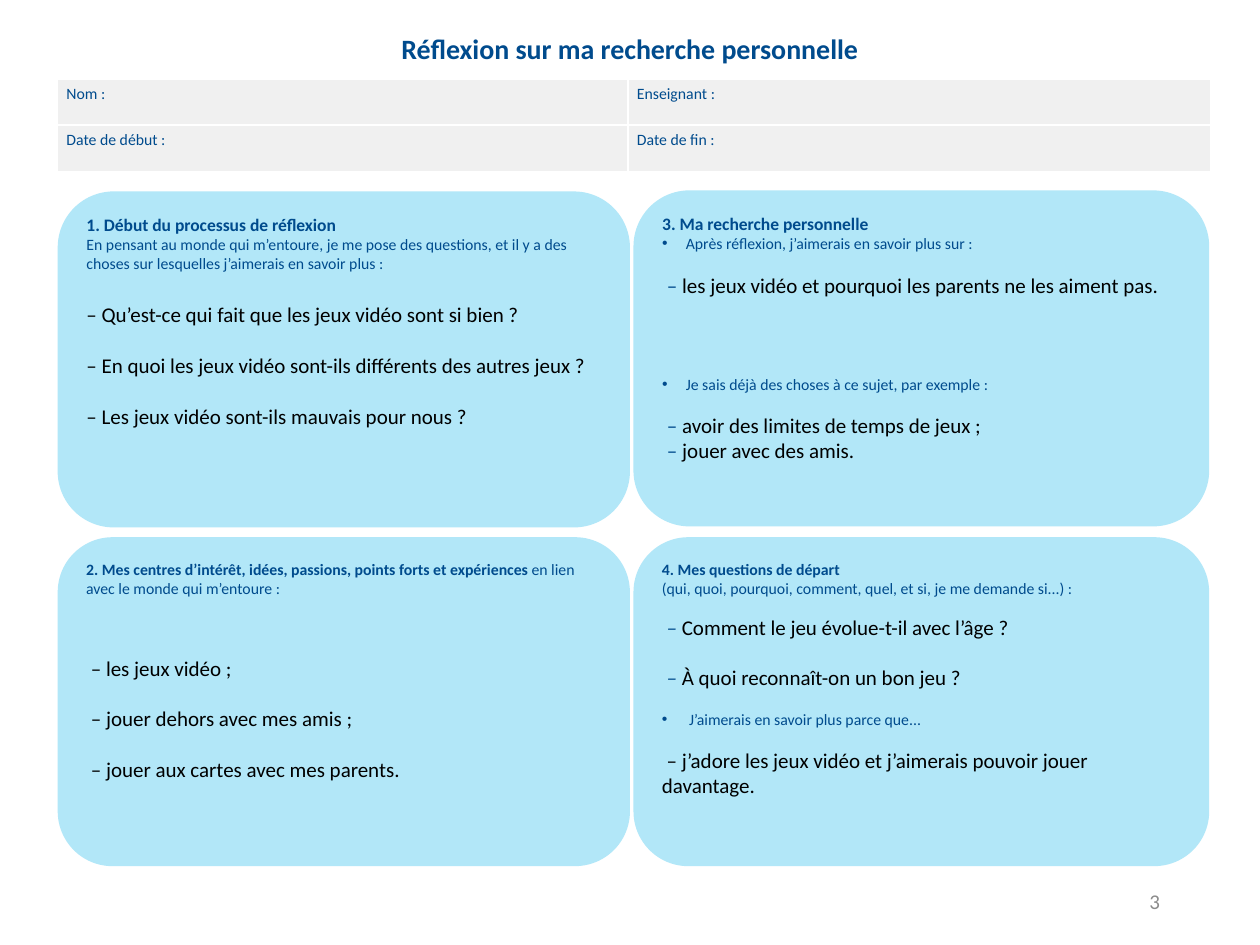
from lxml.etree import SubElement
from pptx import Presentation
from pptx.dml.color import RGBColor
from pptx.enum.shapes import MSO_SHAPE as Shape
from pptx.enum.text import MSO_ANCHOR as Anchor, PP_ALIGN as Align
from pptx.oxml.ns import qn
from pptx.util import Pt

NAVY = RGBColor(0x00, 0x4B, 0x8D)
BLACK = RGBColor(0x00, 0x00, 0x00)
GREY = RGBColor(0x8C, 0x8C, 0x8C)
PALE_GREY = RGBColor(0xF0, 0xF0, 0xF0)
SKY = RGBColor(0xB2, 0xE7, 0xF8)
WHITE = RGBColor(0xFF, 0xFF, 0xFF)

FORMATS = {
    "title": {"size": Pt(16), "color": NAVY, "bold": True},
    "number": {"size": Pt(12), "color": GREY},
    "heading": {"size": Pt(10), "color": NAVY, "bold": True},
    "small heading": {"size": Pt(9), "color": NAVY, "bold": True},
    "prompt": {"size": Pt(9), "color": NAVY},
    "dash": {"size": Pt(12), "color": NAVY},
    "slanted dash": {"size": Pt(12), "color": NAVY, "italic": True},
    "answer": {"size": Pt(12), "color": BLACK},
}

BULLET_INDENT = 13.5
SMALL_GAP = 11
LINE_GAP = 14.6

LEFT, TABLE_TOP = 33, 45.5
COLUMN_WIDTHS = (326, 333)
ROW_HEIGHTS = (26, 26.5)
FIELDS = (("Nom :", "Enseignant :"), ("Date de début :", "Date de fin :"))

# Each card: position and size, then paragraphs as (space before, bulleted, runs).
CARDS = [
    ((LEFT, 109.4, 327, 192), [
        (0, False, [("1. Début du processus de réflexion", "heading")]),
        (0, False, [("En pensant au monde qui m’entoure, je me pose des questions, et il y a "
                     "des choses sur lesquelles j’aimerais en savoir plus :", "prompt")]),
        (16.5, False, [("– Qu’est-ce qui fait que les jeux vidéo sont si bien ?", "answer")]),
        (LINE_GAP, False, [("– En quoi les jeux vidéo sont-ils différents des autres jeux ?", "answer")]),
        (LINE_GAP, False, [("– Les jeux vidéo sont-ils mauvais pour nous ?", "answer")]),
    ]),
    ((LEFT, 307, 327, 188), [
        (0, False, [("2. Mes centres d’intérêt, idées, passions, points forts et expériences ", "small heading"),
                    ("en lien avec le monde qui m’entoure :", "prompt")]),
        (33, False, [(" – les jeux vidéo ;", "answer")]),
        (LINE_GAP, False, [(" – jouer dehors avec mes amis ;", "answer")]),
        (LINE_GAP, False, [(" – jouer aux cartes avec mes parents.", "answer")]),
    ]),
    ((362, 108.8, 329, 192), [
        (0, False, [("3. Ma recherche personnelle", "heading")]),
        (0, True, [("Après réflexion, j’aimerais en savoir plus sur :", "prompt")]),
        (SMALL_GAP, False, [(" – ", "dash"),
                            ("les jeux vidéo et pourquoi les parents ne les aiment pas.", "answer")]),
        (4 * SMALL_GAP, True, [("Je sais déjà des choses à ce sujet, par exemple :", "prompt")]),
        (SMALL_GAP, False, [(" – ", "dash"), ("avoir des limites de temps de jeux ;", "answer")]),
        (0, False, [(" – ", "dash"), ("jouer avec des amis.", "answer")]),
    ]),
    ((362, 307, 329, 188), [
        (0, False, [("4. Mes questions de départ", "small heading")]),
        (0, False, [("(qui, quoi, pourquoi, comment, quel, et si, je me demande si...) :", "prompt")]),
        (9.6, False, [(" – ", "slanted dash"), ("Comment le jeu évolue-t-il avec l’âge ?", "answer")]),
        (LINE_GAP, False, [(" – ", "slanted dash"), ("À quoi reconnaît-on un bon jeu ?", "answer")]),
        (SMALL_GAP, True, [(" J’aimerais en savoir plus parce que...", "prompt")]),
        (SMALL_GAP, False, [(" – j’adore les jeux vidéo et j’aimerais pouvoir jouer davantage.", "answer")]),
    ]),
]


def add_run(paragraph, text, style):
    run = paragraph.add_run()
    run.text = text
    run.font.name = "Calibri"
    for name, value in FORMATS[style].items():
        if name == "color":
            run.font.color.rgb = value
        else:
            setattr(run.font, name, value)


def add_bullet(paragraph):
    properties = paragraph._p.get_or_add_pPr()
    properties.set("marL", str(Pt(BULLET_INDENT)))
    properties.set("indent", str(-Pt(BULLET_INDENT)))
    SubElement(properties, qn("a:buFont"), typeface="Arial")
    SubElement(properties, qn("a:buChar"), char="•")


def add_label(slide, box, text, style, alignment, anchor=Anchor.TOP):
    frame = slide.shapes.add_textbox(*map(Pt, box)).text_frame
    frame.word_wrap = True
    frame.vertical_anchor = anchor
    paragraph = frame.paragraphs[0]
    paragraph.alignment = alignment
    add_run(paragraph, text, style)


def add_card(slide, box, paragraphs):
    shape = slide.shapes.add_shape(Shape.ROUNDED_RECTANGLE, *map(Pt, box))
    shape.shadow.inherit = False
    shape.fill.solid()
    shape.fill.fore_color.rgb = SKY
    shape.line.fill.background()
    frame = shape.text_frame
    frame.word_wrap = True
    frame.vertical_anchor = Anchor.TOP
    for index, (gap, bulleted, runs) in enumerate(paragraphs):
        paragraph = frame.add_paragraph() if index else frame.paragraphs[0]
        paragraph.alignment = Align.LEFT
        paragraph.space_before = Pt(gap)
        if bulleted:
            add_bullet(paragraph)
        for text, style in runs:
            add_run(paragraph, text, style)


def style_cell(cell):
    """Give the cell its margins, white borders and grey fill."""
    margins = {"margin_left": 5, "margin_right": 5, "margin_top": 3, "margin_bottom": 3}
    for name, value in margins.items():
        setattr(cell, name, Pt(value))
    properties = cell._tc.get_or_add_tcPr()
    for side in ("lnL", "lnR", "lnT", "lnB"):
        border = SubElement(properties, qn(f"a:{side}"), w=str(Pt(1)))
        fill = SubElement(border, qn("a:solidFill"))
        SubElement(fill, qn("a:srgbClr"), val=str(WHITE))
    cell.fill.solid()
    cell.fill.fore_color.rgb = PALE_GREY


def add_field_table(slide):
    table = slide.shapes.add_table(
        len(ROW_HEIGHTS), len(COLUMN_WIDTHS), Pt(LEFT), Pt(TABLE_TOP),
        Pt(sum(COLUMN_WIDTHS)), Pt(sum(ROW_HEIGHTS))).table
    table.first_row = table.horz_banding = False
    for column, width in zip(table.columns, COLUMN_WIDTHS):
        column.width = Pt(width)
    for row, height, labels in zip(table.rows, ROW_HEIGHTS, FIELDS):
        row.height = Pt(height)
        for cell, label in zip(row.cells, labels):
            style_cell(cell)
            add_run(cell.text_frame.paragraphs[0], label, "prompt")


def main():
    presentation = Presentation()
    presentation.slide_width, presentation.slide_height = Pt(720), Pt(540)
    slide = presentation.slides.add_slide(presentation.slide_layouts[6])
    add_label(slide, (508, 500.5, 162, 29), "3", "number", Align.RIGHT, Anchor.MIDDLE)
    add_label(slide, (0, 14.5, 720, 26.5), "Réflexion sur ma recherche personnelle", "title", Align.CENTER)
    for box, paragraphs in CARDS:
        add_card(slide, box, paragraphs)
    add_field_table(slide)
    presentation.save("out.pptx")


if __name__ == "__main__":
    main()
